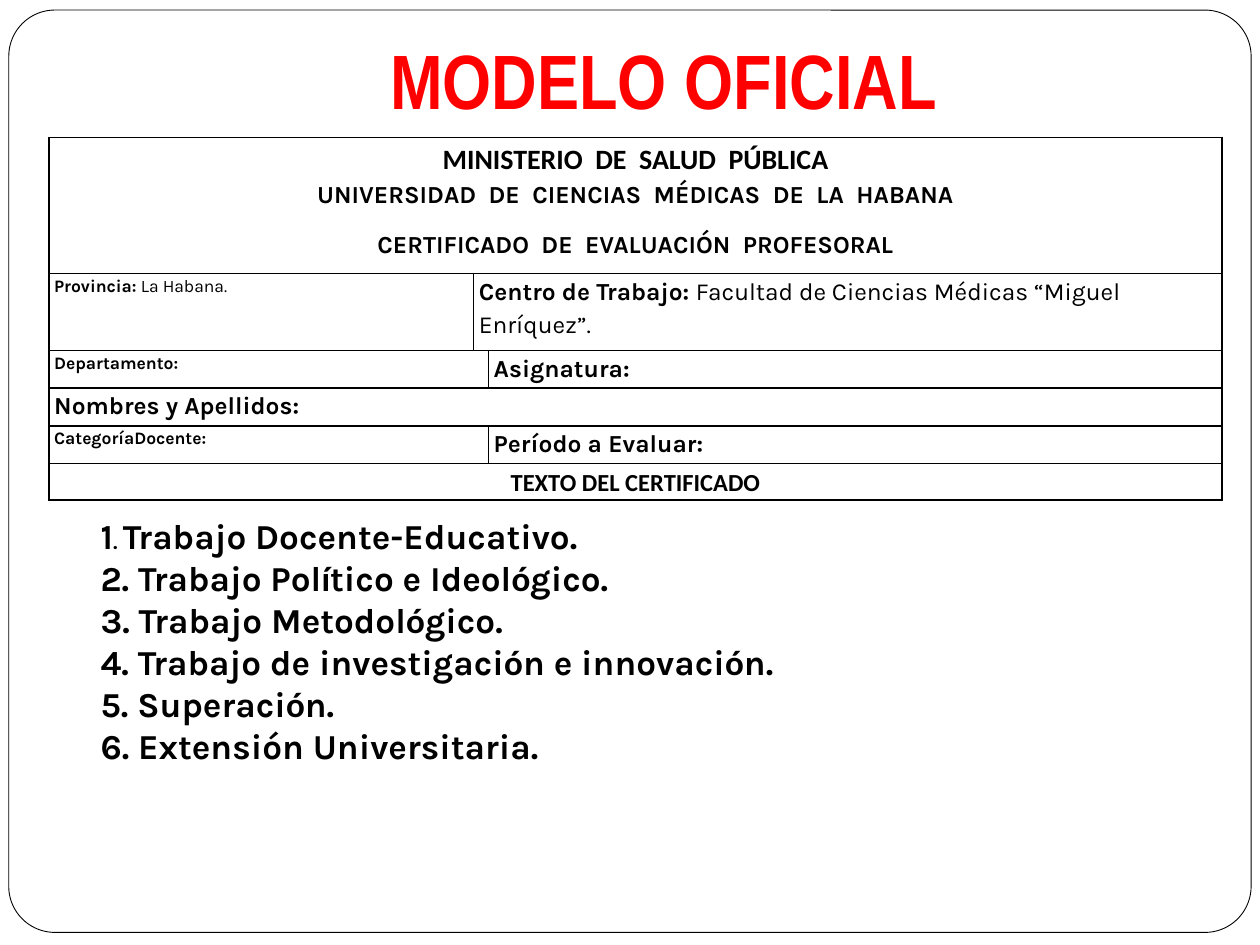
import lxml.etree
import pptx
import pptx.dml.color
import pptx.enum.shapes
import pptx.enum.text
import pptx.oxml.ns
import pptx.util

WIDTH, HEIGHT = 10, 7.5
BLACK, WHITE, RED = "000000", "FFFFFF", "FF0000"
BODY, ACCENT = "Karla", "Calibri"
CENTER = pptx.enum.text.PP_ALIGN.CENTER
LEFT = pptx.enum.text.PP_ALIGN.LEFT

COLUMNS = (3.37, 0.11, 5.82)
ROWS = (1.08, 0.61, 0.3, 0.3, 0.3, 0.29)
FIELDS = (
    (0, 0, 2, [
        (CENTER, 0, [("MINISTERIO  DE  SALUD  PÚBLICA", 16, ACCENT, True)]),
        (CENTER, 10, [("UNIVERSIDAD  DE  CIENCIAS  MÉDICAS  DE  LA  HABANA", 14, BODY, True)]),
        (CENTER, 10, [("CERTIFICADO  DE  EVALUACIÓN  PROFESORAL", 14, BODY, True)])]),
    (1, 0, 0, [(LEFT, 10, [("Provincia: ", 10, BODY, True), ("La Habana.", 10, BODY, False)])]),
    (1, 1, 2, [(LEFT, 10, [
        ("Centro de Trabajo: ", 14, BODY, True),
        ("Facultad de Ciencias Médicas “Miguel Enríquez”.", 14, BODY, False)])]),
    (2, 0, 1, [(LEFT, 10, [("Departamento:", 10, BODY, True)])]),
    (2, 2, 2, [(LEFT, 10, [("Asignatura:", 14, BODY, True)])]),
    (3, 0, 2, [(LEFT, 10, [("Nombres y Apellidos:", 14, BODY, True)])]),
    (4, 0, 1, [(LEFT, 10, [("CategoríaDocente:", 10, BODY, True)])]),
    (4, 2, 2, [(LEFT, 10, [("Período a Evaluar:", 14, BODY, True)])]),
    (5, 0, 2, [(CENTER, 0, [("TEXTO DEL CERTIFICADO", 14, ACCENT, True)])]),
)
TOPICS = (
    "2. Trabajo Pol|í|tico e Ideol|ó|gico.",
    "3. Trabajo Metodol|ó|gico.",
    "4. Trabajo de investigaci|ó|n e innovaci|ó|n.",
    "5. Superaci|ó|n.",
    "6. Extensión Universitaria.",
)


def color(value):
    """Turn a hex string into a colour."""
    return pptx.dml.color.RGBColor.from_string(value)


def inches(box):
    """Turn a box of numbers into lengths."""
    return [pptx.util.Inches(length) for length in box]


def write(para, pieces, ink=BLACK):
    """Fill a paragraph with pieces of text, size, font and weight."""
    for text, size, font, bold in pieces:
        span = para.add_run()
        span.text = text
        span.font.size = pptx.util.Pt(size)
        span.font.name = font
        span.font.bold = bold
        span.font.color.rgb = color(ink)


def paragraphs(frame, count):
    """Return the given number of paragraphs of an empty text frame."""
    return [frame.paragraphs[0]] + [frame.add_paragraph() for _ in range(count - 1)]


def add_frame(page, box):
    """Draw the rounded border of the page."""
    border = page.shapes.add_shape(
        pptx.enum.shapes.MSO_SHAPE.ROUNDED_RECTANGLE, *inches(box))
    border.adjustments[0] = 0.05
    border.shadow.inherit = False
    border.fill.solid()
    border.fill.fore_color.rgb = color(WHITE)
    border.line.color.rgb = color(BLACK)
    border.line.width = pptx.util.Pt(0.5)


def add_title(page, box):
    """Write the heading at the foot of its box."""
    frame = page.shapes.add_textbox(*inches(box)).text_frame
    frame.word_wrap = True
    frame.vertical_anchor = pptx.enum.text.MSO_ANCHOR.BOTTOM
    frame.margin_bottom = pptx.util.Inches(0.1)
    frame.paragraphs[0].alignment = CENTER
    write(frame.paragraphs[0], [("MODELO OFICIAL", 44, "Arial Narrow", True)], RED)


def style_cell(cell):
    """Give a cell thin black borders, no fill and narrow margins."""
    properties = cell._tc.get_or_add_tcPr()
    for side in ("a:lnL", "a:lnR", "a:lnT", "a:lnB"):
        line = lxml.etree.SubElement(
            properties, pptx.oxml.ns.qn(side), w=str(pptx.util.Pt(1)))
        fill = lxml.etree.SubElement(line, pptx.oxml.ns.qn("a:solidFill"))
        lxml.etree.SubElement(fill, pptx.oxml.ns.qn("a:srgbClr"), val=BLACK)
    cell.fill.background()
    cell.margin_left = cell.margin_right = pptx.util.Inches(0.04)
    cell.margin_top = cell.margin_bottom = 0


def add_certificate(page, left, top):
    """Build the certificate form as a table with merged cells."""
    box = inches((left, top, sum(COLUMNS), sum(ROWS)))
    table = page.shapes.add_table(len(ROWS), len(COLUMNS), *box).table
    table.first_row = table.horz_banding = False
    for column, width in zip(table.columns, COLUMNS):
        column.width = pptx.util.Inches(width)
    for row, height in zip(table.rows, ROWS):
        row.height = pptx.util.Inches(height)
    for cell in table.iter_cells():
        style_cell(cell)
    for row, first, last, lines in FIELDS:
        cell = table.cell(row, first)
        if last > first:
            cell.merge(table.cell(row, last))
        for para, (align, after, pieces) in zip(
                paragraphs(cell.text_frame, len(lines)), lines):
            para.alignment = align
            para.line_spacing = 1.15
            para.space_after = pptx.util.Pt(after)
            write(para, pieces)


def add_topics(page, box):
    """List the numbered topics, with marked letters in the accent font."""
    frame = page.shapes.add_textbox(*inches(box)).text_frame
    frame.word_wrap = True
    frame.margin_top = pptx.util.Inches(0.1)
    first, *others = paragraphs(frame, len(TOPICS) + 1)
    write(first, [("1", 20, BODY, True), (". ", 12, BODY, True),
                  ("Trabajo Docente-Educativo.", 20, BODY, True)])
    for para, topic in zip(others, TOPICS):
        write(para, [(part, 20, ACCENT if index % 2 else BODY, True)
                     for index, part in enumerate(topic.split("|"))])


def main():
    """Build and save the slide."""
    deck = pptx.Presentation()
    deck.slide_width, deck.slide_height = inches((WIDTH, HEIGHT))
    page = deck.slides.add_slide(deck.slide_layouts[6])
    add_frame(page, (0.07, 0.08, WIDTH - 0.14, HEIGHT - 0.18))
    add_certificate(page, 0.39, 1.09)
    add_topics(page, (0.7, 3.98, 0.82 * WIDTH, 2.49))
    add_title(page, (1.02, -0.16, 0.85 * WIDTH, 1.25))
    deck.save("out.pptx")


if __name__ == "__main__":
    main()
